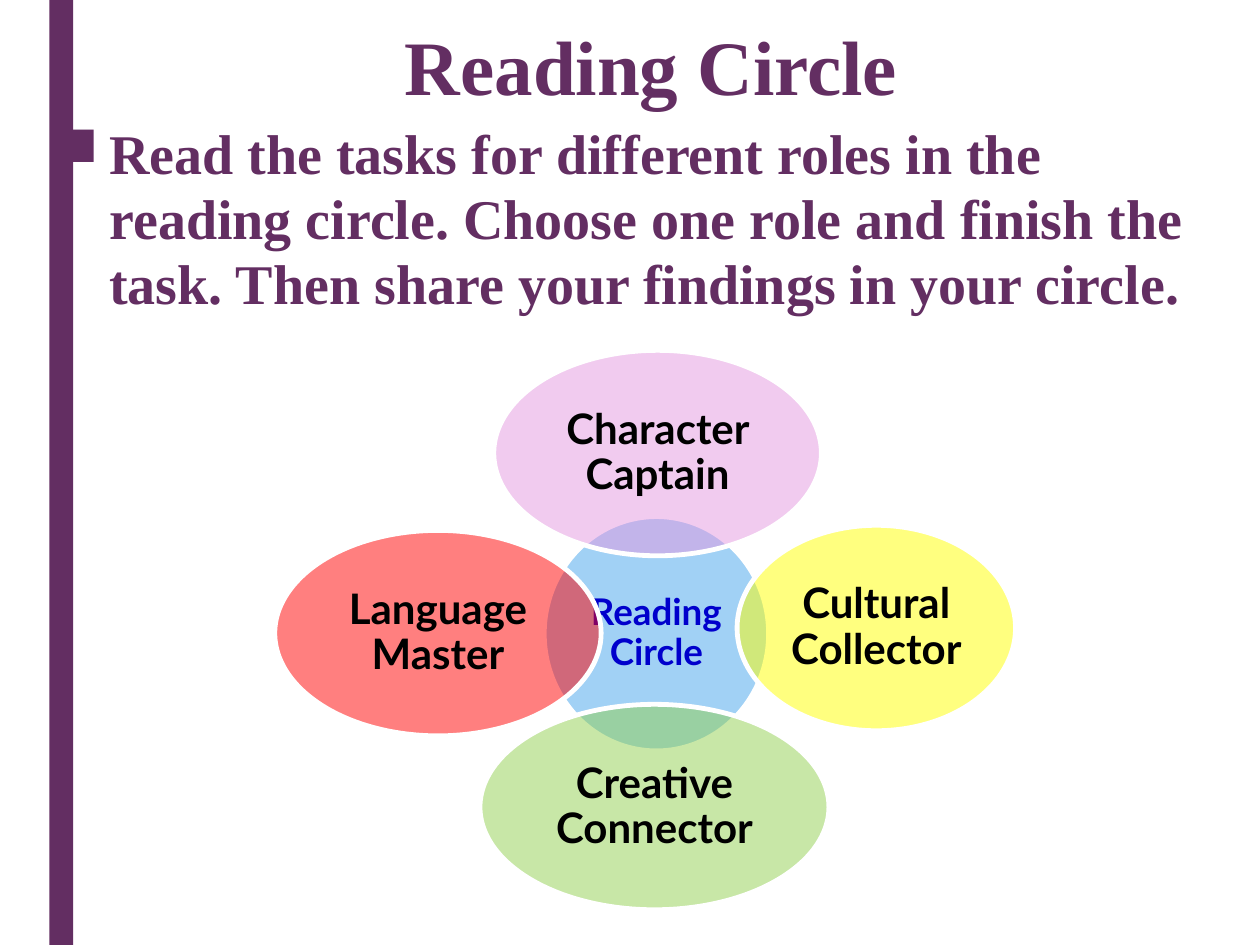
from lxml import etree
from pptx import Presentation
from pptx.dml.color import RGBColor
from pptx.enum import shapes, text
from pptx.oxml import ns
from pptx.util import Pt

PLUM = "632E62"


def paint(fill, colour, alpha=None):
    """Fill with a solid colour; alpha is the opacity in percent."""
    fill.solid()
    fill.fore_color.rgb = RGBColor.from_string(colour)
    if alpha is not None:
        srgb = fill._xPr.find(".//" + ns.qn("a:srgbClr"))
        etree.SubElement(srgb, ns.qn("a:alpha"), val=str(alpha * 1000))


def write(box, words, *, font, size, colour, spacing, align, anchor, insets=(7.2, 3.6)):
    frame = box.text_frame
    frame.word_wrap = True
    frame.auto_size = text.MSO_AUTO_SIZE.NONE
    frame.vertical_anchor = anchor
    frame.margin_left = frame.margin_right = Pt(insets[0])
    frame.margin_top = frame.margin_bottom = Pt(insets[1])
    para = frame.paragraphs[0]
    para.alignment = align
    para.line_spacing = spacing
    span = para.add_run()
    span.text = words
    span.font.name = font
    span.font.size = Pt(size)
    span.font.bold = True
    paint(span.font.fill, colour)
    return para


deck = Presentation()
deck.slide_width, deck.slide_height = Pt(720), Pt(540)
page = deck.slides.add_slide(deck.slide_layouts[5])

stripe = page.shapes.add_shape(shapes.MSO_SHAPE.RECTANGLE, Pt(28.3), 0, Pt(13.6), Pt(540))
stripe.shadow.inherit = False
paint(stripe.fill, PLUM)
stripe.line.fill.background()

title = page.shapes.title
title.left, title.top, title.width, title.height = Pt(48.2), Pt(9.4), Pt(648), Pt(62)
write(title, "Reading Circle", font="Times New Roman", size=44, colour=PLUM, spacing=0.89,
      align=text.PP_ALIGN.CENTER, anchor=text.MSO_ANCHOR.MIDDLE)

task = page.shapes.add_textbox(Pt(25.2), Pt(66.2), Pt(680.4), Pt(120))
para = write(
    task,
    "Read the tasks for different roles in the reading circle. Choose one role "
    "and finish the task. Then share your findings in your circle.",
    font="Times New Roman", size=32, colour=PLUM, spacing=0.97,
    align=text.PP_ALIGN.LEFT, anchor=text.MSO_ANCHOR.TOP)
props = para._p.get_or_add_pPr()
props.set("marL", str(Pt(30.2)))
props.set("indent", str(-Pt(30.2)))
etree.SubElement(props, ns.qn("a:buChar"), char="■")

# Words, left, top, width, height, fill, text size, text colour
roles = [
    ("Reading Circle", 311, 295.2, 128.2, 133.9, "45A5ED", 21, "0000CC"),
    ("Character Captain", 282.2, 200.2, 187.2, 117.4, "E498E1", 24, "000000"),
    ("Cultural Collector", 421.2, 300.2, 159.1, 117.4, "FFFF00", 24, "000000"),
    ("Creative Connector", 274.3, 402.5, 199.4, 117.4, "92D050", 24, "000000"),
    ("Language Master", 157, 303.1, 186.5, 117.4, "FF0000", 24, "000000"),
]
for words, left, top, width, height, colour, size, ink in roles:
    oval = page.shapes.add_shape(
        shapes.MSO_SHAPE.OVAL, Pt(left), Pt(top), Pt(width), Pt(height))
    oval.shadow.inherit = False
    paint(oval.fill, colour, alpha=50)
    paint(oval.line.fill, "FFFFFF")
    oval.line.width = Pt(2.75)
    write(oval, words, font="Lato", size=size, colour=ink, spacing=0.9,
          align=text.PP_ALIGN.CENTER, anchor=text.MSO_ANCHOR.MIDDLE, insets=(2.2, 2.2))

deck.save("out.pptx")
